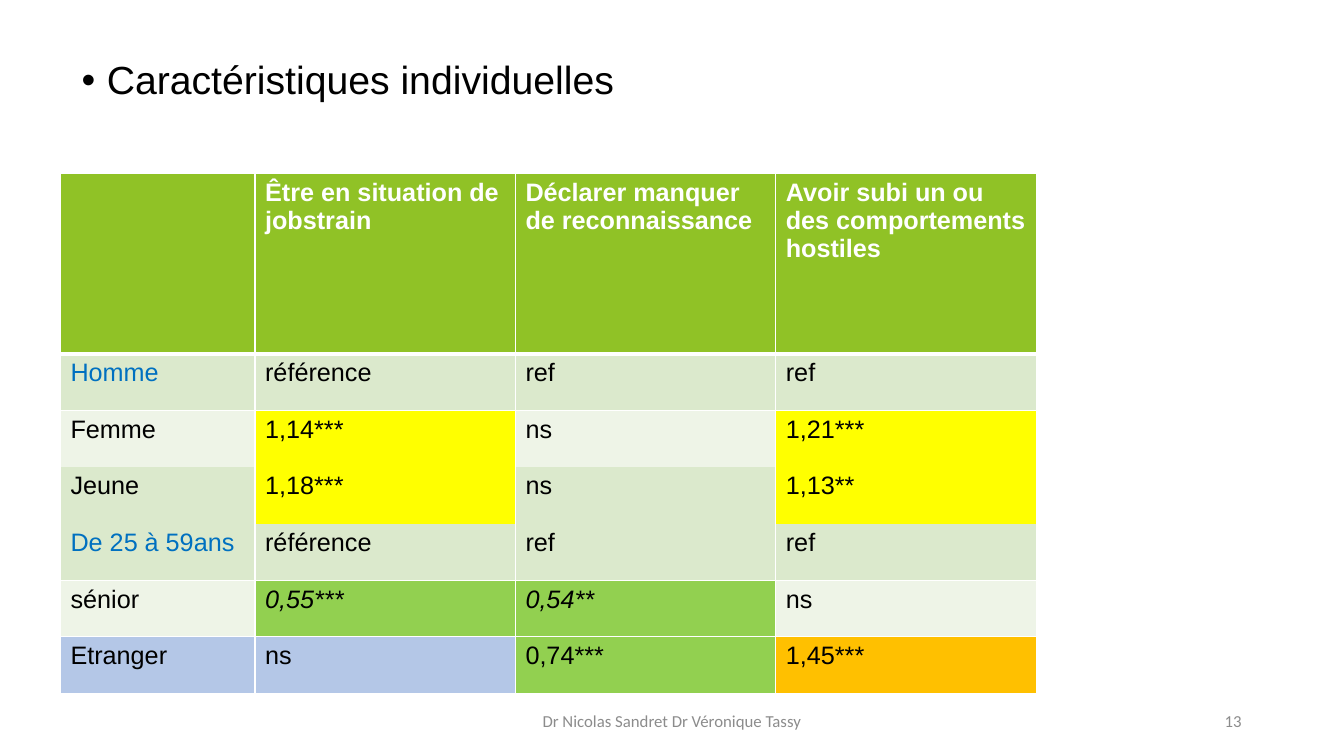
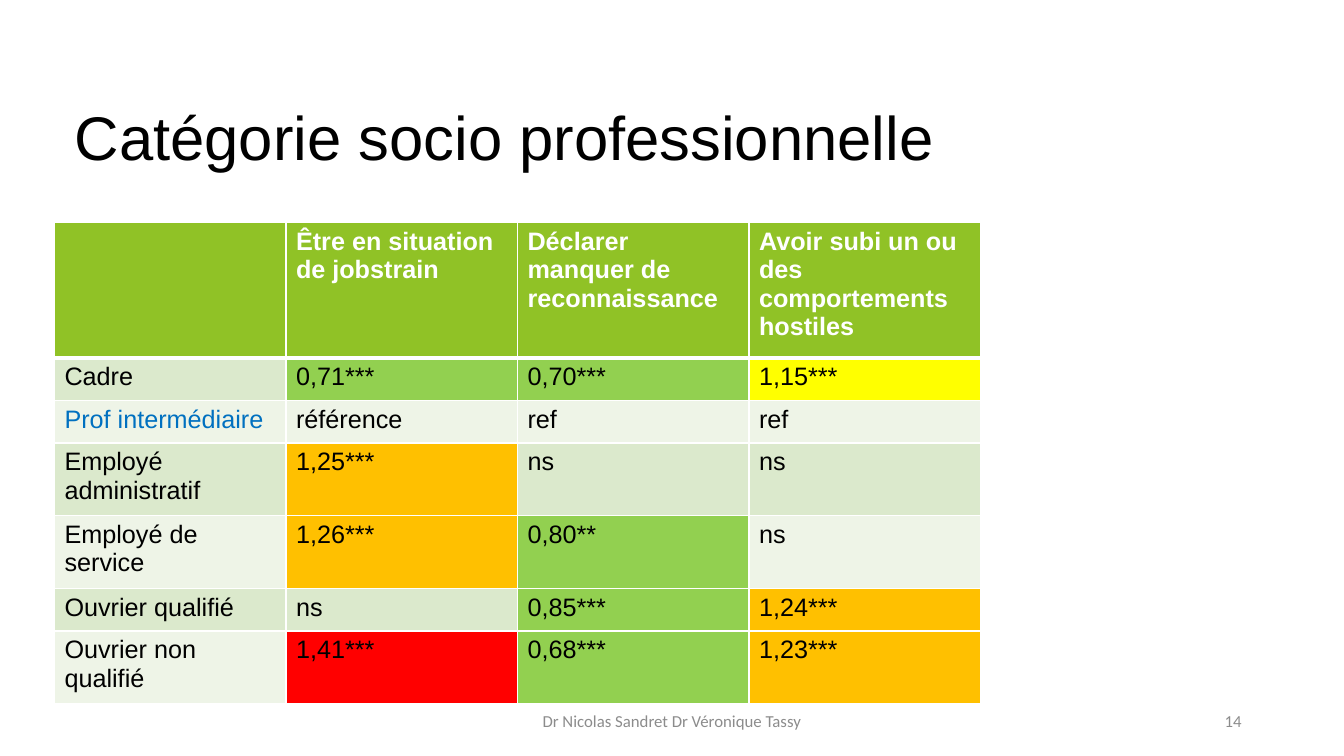
"""Builds two slides of odds ratios by individual and occupational category."""
from dataclasses import dataclass
from typing import Any

from lxml import etree
from pptx import Presentation
from pptx import util as u
from pptx.dml.color import RGBColor
from pptx.enum import text as t
from pptx.oxml import ns

FONT, FOOTER_FONT = "Arial", "Calibri"
BLACK, WHITE, BLUE, GREY = "000000", "FFFFFF", "0070C0", "8C8C8C"
HEADER, DARK, LIGHT, PERIWINKLE = "90C226", "DBE9CC", "EEF4E7", "B4C7E7"
GREEN, YELLOW, ORANGE, RED = "92D050", "FFFF00", "FFC000", "FF0000"
THIN, THICK = 0.96, 3
REFERENCE = ("référence", "ref", "ref")
HEADINGS = (
    "",
    "Être en situation de jobstrain",
    "Déclarer manquer de reconnaissance",
    "Avoir subi un ou des comportements hostiles",
)
FOOTER = "Dr Nicolas Sandret Dr Véronique Tassy"


@dataclass(frozen=True)
class Row:
    label: str
    values: tuple[str, str, str]
    fill: str
    marks: tuple[str, str, str] = ("", "", "")
    height: float = 30.4
    italic_marks: bool = False
    open_below: bool = False


@dataclass(frozen=True)
class Page:
    number: int
    title: str
    title_at: tuple[float, float]
    title_size: float
    bulleted: bool
    table_at: tuple[float, float]
    columns: tuple[float, ...]
    header_height: float
    rows: tuple[Row, ...]


TALL, DOUBLE = 40.4, 52

PAGES = (
    Page(
        13, "Caractéristiques individuelles", (58.3, 34.6), 28, True,
        (43.2, 123.9), (139, 186, 186, 186), 128.9,
        (
            Row("Homme", REFERENCE, DARK, height=TALL),
            Row("Femme", ("1,14***", "ns", "1,21***"), LIGHT, (YELLOW, "", YELLOW),
                TALL, open_below=True),
            Row("Jeune", ("1,18***", "ns", "1,13**"), DARK, (YELLOW, "", YELLOW),
                TALL, open_below=True),
            Row("De 25 à 59ans", REFERENCE, DARK, height=TALL),
            Row("sénior", ("0,55***", "0,54**", "ns"), LIGHT, (GREEN, GREEN, ""),
                TALL, italic_marks=True),
            Row("Etranger", ("ns", "0,74***", "1,45***"), PERIWINKLE,
                ("", GREEN, ORANGE), TALL),
        ),
    ),
    Page(
        14, "Catégorie socio professionnelle", (53.3, 76.3), 44, False,
        (38.9, 159.1), (165.4,) * 4, 96.5,
        (
            Row("Cadre", ("0,71***", "0,70***", "1,15***"), DARK,
                (GREEN, GREEN, YELLOW)),
            Row("Prof intermédiaire", REFERENCE, LIGHT),
            Row("Employé administratif", ("1,25***", "ns", "ns"), DARK,
                (ORANGE, "", ""), DOUBLE),
            Row("Employé de service", ("1,26***", "0,80**", "ns"), LIGHT,
                (ORANGE, GREEN, ""), DOUBLE),
            Row("Ouvrier qualifié", ("ns", "0,85***", "1,24***"), DARK,
                ("", GREEN, ORANGE)),
            Row("Ouvrier non qualifié", ("1,41***", "0,68***", "1,23***"), LIGHT,
                (RED, GREEN, ORANGE), DOUBLE),
        ),
    ),
)


def colour(value: str) -> RGBColor:
    return RGBColor.from_string(value)


def write(frame: Any, text: str, *, size: float = 18, font: str = FONT,
          ink: str = BLACK, bold: bool = False, italic: bool = False,
          align: Any = t.PP_ALIGN.LEFT) -> Any:
    para = frame.paragraphs[0]
    para.alignment = align
    if text:
        span = para.add_run()
        span.text = text
        span.font.size = u.Pt(size)
        span.font.name = font
        span.font.bold = bold
        span.font.italic = italic
        span.font.color.rgb = colour(ink)
    return para


def add_box(slide: Any, left: float, top: float, width: float, height: float) -> Any:
    box = slide.shapes.add_textbox(u.Pt(left), u.Pt(top), u.Pt(width), u.Pt(height))
    frame = box.text_frame
    frame.word_wrap = True
    frame.vertical_anchor = t.MSO_ANCHOR.MIDDLE
    return frame


def add_bullet(para: Any, indent: float) -> None:
    properties = para._p.get_or_add_pPr()
    properties.set("marL", str(u.Pt(indent)))
    properties.set("indent", str(-u.Pt(indent)))
    etree.SubElement(properties, ns.qn("a:buFont"), typeface=FONT)
    etree.SubElement(properties, ns.qn("a:buChar"), char="•")


def add_title(slide: Any, page: Page) -> None:
    frame = add_box(slide, *page.title_at, 676.8, 48.2)
    frame.margin_left = frame.margin_right = u.Pt(0)
    frame.margin_top = frame.margin_bottom = u.Pt(0)
    para = write(frame, page.title, size=page.title_size)
    para.line_spacing = 0.9
    if page.bulleted:
        para.space_before = u.Pt(10)
        add_bullet(para, 18)


def set_borders(cell: Any, above: float, below: float) -> None:
    properties = cell._tc.get_or_add_tcPr()
    for side, width in (("L", THIN), ("R", THIN), ("T", above), ("B", below)):
        line = etree.SubElement(properties, ns.qn(f"a:ln{side}"), w=str(u.Pt(width)))
        if width:
            fill = etree.SubElement(line, ns.qn("a:solidFill"))
            etree.SubElement(fill, ns.qn("a:srgbClr"), val=WHITE)
        else:
            etree.SubElement(line, ns.qn("a:noFill"))


def fill_cell(cell: Any, text: str, fill: str, above: float, below: float,
              **style: Any) -> None:
    set_borders(cell, above, below)
    cell.fill.solid()
    cell.fill.fore_color.rgb = colour(fill)
    write(cell.text_frame, text, **style)


def add_ratio_table(slide: Any, page: Page) -> None:
    heights = (page.header_height, *(row.height for row in page.rows))
    left, top = page.table_at
    table = slide.shapes.add_table(
        len(heights), len(page.columns), u.Pt(left), u.Pt(top),
        u.Pt(sum(page.columns)), u.Pt(sum(heights))).table
    for column, width in zip(table.columns, page.columns):
        column.width = u.Pt(width)
    for line, height in zip(table.rows, heights):
        line.height = u.Pt(height)

    for index, heading in enumerate(HEADINGS):
        fill_cell(table.cell(0, index), heading, HEADER, THIN, THICK,
                  ink=WHITE, bold=True)
    above = THICK
    for number, row in enumerate(page.rows, 1):
        below = 0 if row.open_below else THIN
        label_ink = BLUE if row.values == REFERENCE else BLACK
        fill_cell(table.cell(number, 0), row.label, row.fill, above, below,
                  ink=label_ink)
        for index, (value, mark) in enumerate(zip(row.values, row.marks), 1):
            fill_cell(table.cell(number, index), value, mark or row.fill, above,
                      below, italic=row.italic_marks and bool(mark))
        above = below


def add_footer(slide: Any, number: int) -> None:
    for text, left, width, align in (
            (FOOTER, 318, 324, t.PP_ALIGN.CENTER),
            (str(number), 678, 216, t.PP_ALIGN.RIGHT)):
        write(add_box(slide, left, 500.5, width, 28.8), text, size=12,
              font=FOOTER_FONT, ink=GREY, align=align)


def main() -> None:
    deck = Presentation()
    deck.slide_width, deck.slide_height = u.Pt(960), u.Pt(540)
    for page in PAGES:
        slide = deck.slides.add_slide(deck.slide_layouts[6])
        add_title(slide, page)
        add_ratio_table(slide, page)
        add_footer(slide, page.number)
    deck.save("out.pptx")


if __name__ == "__main__":
    main()
